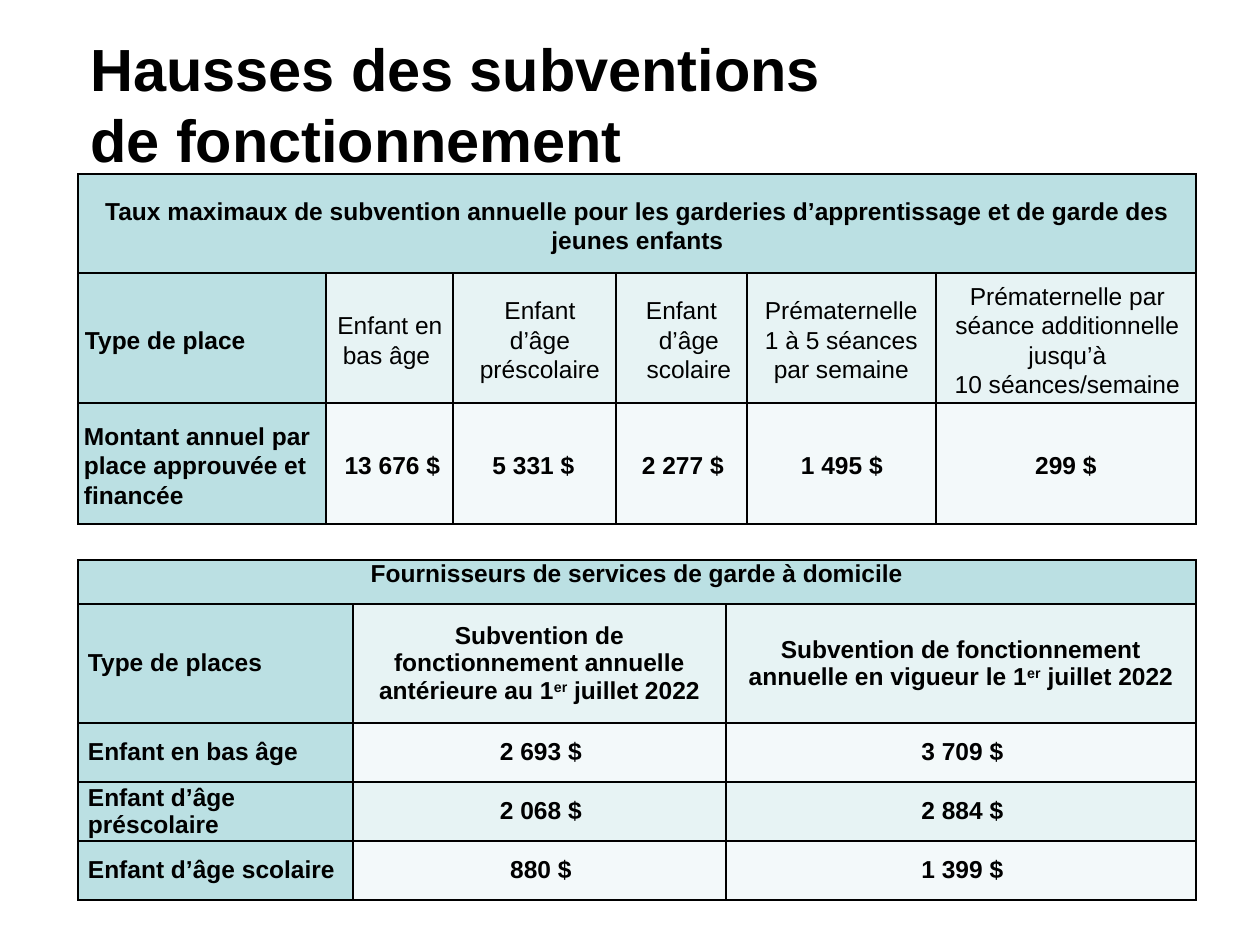
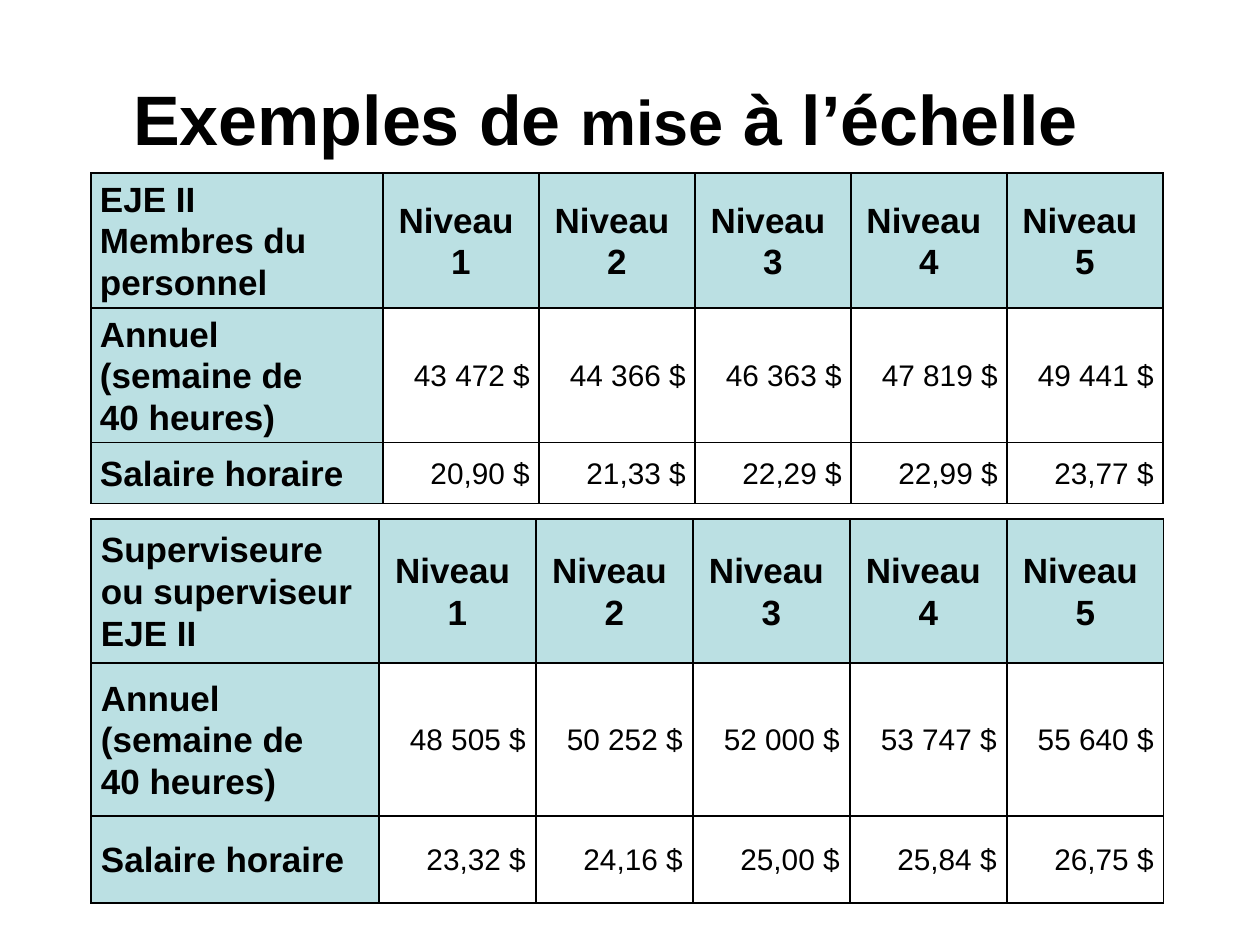
from dataclasses import dataclass

from lxml.etree import SubElement
from pptx import Presentation
from pptx.dml.color import RGBColor
from pptx.enum.text import MSO_ANCHOR as Anchor, PP_ALIGN as Align
from pptx.oxml.ns import qn
from pptx.util import Emu, Pt

EMU_PER_PX = 914400 / 126
NO_BREAK_SPACE = chr(160)  # typed as ~ in the texts below


@dataclass(frozen=True)
class Theme:
    font: str = "Arial"
    ink: str = "000000"
    header: str = "BBE0E3"
    tint: str = "E7F3F4"
    pale: str = "F3F9FA"
    white: str = "FFFFFF"
    border_pt: int = 1
    left_title: int = 34
    center_title: int = 40
    title_word: int = 36
    rates: int = 14
    scale_label: int = 20
    scale_amount: int = 17


THEME = Theme()


@dataclass
class Cell:
    text: str
    fill: str
    size: int = THEME.rates
    bold: bool = True
    align: Align = Align.CENTER
    left: int = 0    # paragraph indent
    first: int = 0   # extra indent of the first line
    anchor: Anchor = Anchor.MIDDLE


def px(length):
    return Emu(round(length * EMU_PER_PX))


# Text
def format_run(run, size, bold=True):
    run.font.name = THEME.font
    run.font.size = Pt(size)
    run.font.bold = bold
    run.font.color.rgb = RGBColor.from_string(THEME.ink)


def raise_ordinals(paragraph):
    """Set the parts between ^ marks as superscript."""
    parts = paragraph.text.split("^")
    paragraph.text = parts[0]
    for index, part in enumerate(parts[1:], start=1):
        run = paragraph.add_run()
        run.text = part
        if index % 2:
            run.font._element.set("baseline", "30000")


def add_title(slide, box, text, size, align, top_inset=6):
    shape = slide.shapes.add_textbox(*map(px, box))
    frame = shape.text_frame
    frame.word_wrap = True
    frame.vertical_anchor = Anchor.MIDDLE
    frame.margin_top = px(top_inset)
    frame.text = text
    paragraph = frame.paragraphs[0]
    paragraph.alignment = align
    for run in paragraph.runs:
        format_run(run, size)
    for line_break in paragraph._p.findall(qn("a:br")):
        SubElement(line_break, qn("a:rPr"), sz=str(THEME.center_title * 100))
    return paragraph


# Tables
def add_borders(table_cell):
    properties = table_cell._tc.get_or_add_tcPr()
    for side in ("lnL", "lnR", "lnT", "lnB"):
        line = SubElement(properties, qn(f"a:{side}"),
                          w=str(Pt(THEME.border_pt)))
        fill = SubElement(line, qn("a:solidFill"))
        SubElement(fill, qn("a:srgbClr"), val=THEME.ink)


def set_cell(table_cell, cell, spacing):
    table_cell.vertical_anchor = cell.anchor
    frame = table_cell.text_frame
    frame.text = cell.text.replace("~", NO_BREAK_SPACE)
    for paragraph in frame.paragraphs:
        raise_ordinals(paragraph)
        paragraph.alignment = cell.align
        paragraph.line_spacing = spacing
        properties = paragraph._p.get_or_add_pPr()
        properties.set("marL", str(px(cell.left)))
        properties.set("indent", str(px(cell.first)))
        for run in paragraph.runs:
            format_run(run, cell.size, cell.bold)


def add_grid(slide, left, top, widths, heights, rows, insets, spacing=1.07):
    """Add a table; a row with a single cell spans all columns."""
    table = slide.shapes.add_table(
        len(heights), len(widths), px(left), px(top),
        px(sum(widths)), px(sum(heights))).table
    table.first_row = table.horz_banding = False
    for column, width in zip(table.columns, widths):
        column.width = px(width)
    for row, height in zip(table.rows, heights):
        row.height = px(height)
    inset_left, inset_top, inset_right = map(px, insets)
    for row_index, cells in enumerate(rows):
        if len(cells) == 1:
            table.cell(row_index, 0).merge(
                table.cell(row_index, len(widths) - 1))
        for column_index in range(len(widths)):
            table_cell = table.cell(row_index, column_index)
            table_cell.margin_left = inset_left
            table_cell.margin_right = inset_right
            table_cell.margin_top = inset_top
            table_cell.margin_bottom = 0
            add_borders(table_cell)
            table_cell.fill.solid()
            table_cell.fill.fore_color.rgb = RGBColor.from_string(
                cells[min(column_index, len(cells) - 1)].fill)
            if column_index < len(cells):
                set_cell(table_cell, cells[column_index], spacing)


def label(text, size=THEME.rates, left=0):
    return Cell(text, THEME.header, size, align=Align.LEFT, left=left)


def add_centre_rates(slide):
    place_types = [
        ("Enfant en bas âge ", 4, 0),
        ("Enfant d’âge préscolaire", 14, 0),
        ("Enfant d’âge scolaire", 18, -15),
        ("Prématernelle\n1 à 5~séances par semaine", 3, 0),
        ("Prématernelle par séance additionnelle jusqu’à "
         "10~séances/semaine", 6, 0),
    ]
    amounts = [("13~676~$", 9), ("5~331~$", 1), ("2~277~$", 6),
               ("1~495~$", 4), ("299~$", 3)]
    rows = [
        [Cell("Taux maximaux de subvention annuelle pour les garderies "
              "d’apprentissage et de garde des jeunes enfants",
              THEME.header, left=4)],
        [label("Type de place", left=1)]
        + [Cell(text, THEME.tint, bold=False, left=left, first=first)
           for text, left, first in place_types],
        [label("Montant annuel par place approuvée et financée")]
        + [Cell(text, THEME.pale, left=left) for text, left in amounts],
    ]
    add_grid(slide, 78, 174, [248, 127, 163, 131, 189, 260],
             [99, 121, 121], rows, insets=(6, 4, 9))


def add_home_rates(slide):
    rates = [("Enfant en bas âge", "2~693~$", "3~709~$"),
             ("Enfant d’âge préscolaire", "2~068~$", "2~884~$"),
             ("Enfant d’âge scolaire", "880~$", "1~399~$")]
    periods = ["Subvention de fonctionnement annuelle antérieure au "
               "1^er^~juillet~2022",
               "Subvention de fonctionnement annuelle en vigueur le "
               "1^er^~juillet~2022"]
    rows = [
        [Cell("Fournisseurs de services de garde à domicile",
              THEME.header, anchor=Anchor.TOP)],
        [label("Type de places")]
        + [Cell(period, THEME.tint) for period in periods],
    ]
    for index, (place, *amounts) in enumerate(rates):
        fill = THEME.tint if index % 2 else THEME.pale
        rows.append([label(place)]
                    + [Cell(amount, fill, left=3) for amount in amounts])
    add_grid(slide, 78, 560, [275, 373, 470], [44, 119, 59, 59, 59],
             rows, insets=(10, 0, 10), spacing=1.0)


def add_pay_scale(slide, top, widths, heights, inset, staff, annual, hourly):
    size = THEME.scale_label
    rows = [[label(staff, size)]
            + [Cell(f"Niveau~{level}", THEME.header, size)
               for level in range(1, 6)]]
    for text, amounts in (("Annuel\n(semaine de 40~heures)", annual),
                          ("Salaire horaire", hourly)):
        rows.append([label(text, size)]
                    + [Cell(f"{amount}~$", THEME.white, THEME.scale_amount,
                            False, Align.RIGHT) for amount in amounts])
    add_grid(slide, 91, top, widths, heights, rows, insets=(inset, 0, inset))


# Slides
def build_grants(slide):
    add_title(slide, (78, 43, 1118, 121),
              "Hausses des subventions \vde fonctionnement",
              THEME.left_title, Align.LEFT)
    add_home_rates(slide)
    add_centre_rates(slide)


def build_scales(slide):
    paragraph = add_title(slide, (48, 47, 1115, 126), "Exemples de ",
                          THEME.center_title, Align.CENTER, top_inset=22)
    for text, size in (("mise", THEME.title_word),
                       (" à l’échelle", THEME.center_title)):
        run = paragraph.add_run()
        run.text = text
        format_run(run, size)
    add_pay_scale(
        slide, 173, [292] + [156] * 5, [125, 125, 61], 9,
        "EJE~II\nMembres du personnel",
        ["43~472", "44~366", "46~363", "47~819", "49~441"],
        ["20,90", "21,33", "22,29", "22,99", "23,77"])
    add_pay_scale(
        slide, 519, [288] + [157] * 5, [144, 153, 87], 10,
        "Superviseure ou superviseur EJE~II",
        ["48~505", "50~252", "52~000", "53~747", "55~640"],
        ["23,32", "24,16", "25,00", "25,84", "26,75"])


def main():
    presentation = Presentation()
    presentation.slide_width = px(1260)
    presentation.slide_height = px(945)
    blank = presentation.slide_layouts[6]
    for build in (build_grants, build_scales):
        build(presentation.slides.add_slide(blank))
    presentation.save("out.pptx")


if __name__ == "__main__":
    main()
